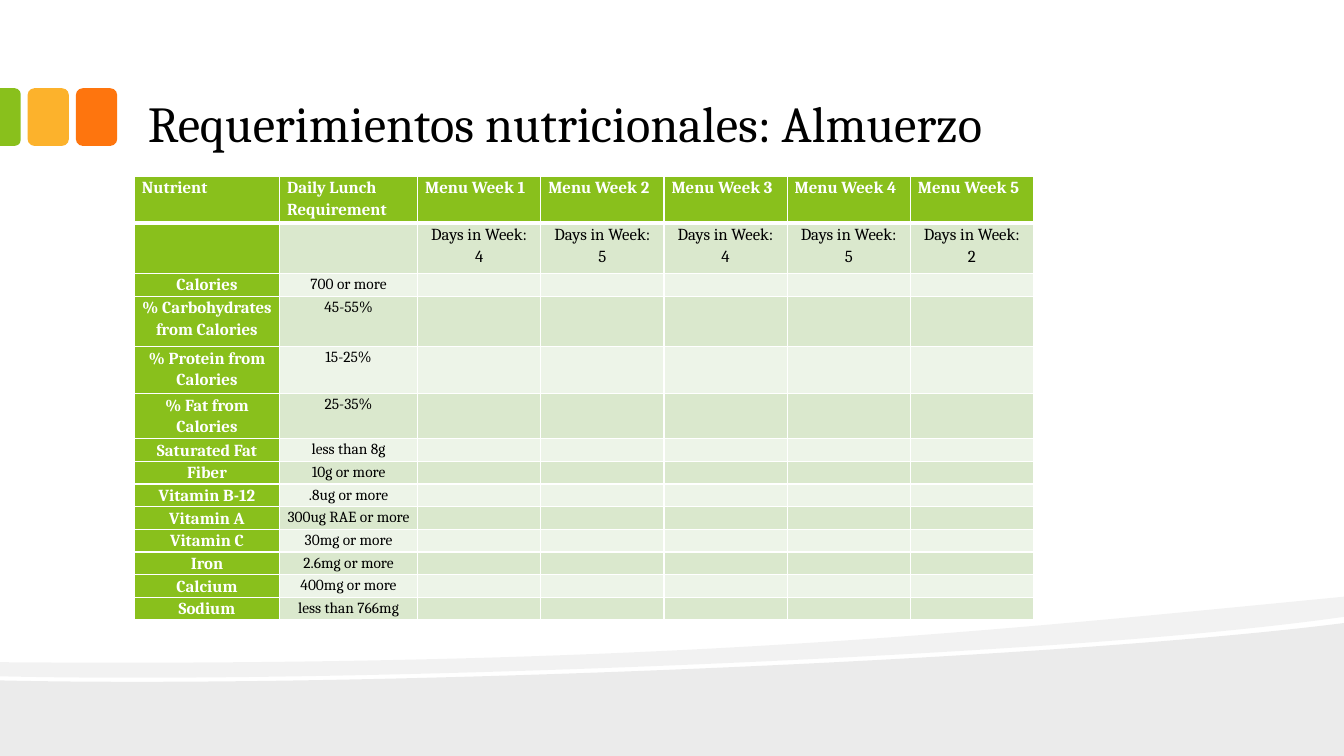
from dataclasses import dataclass

from lxml import etree
from pptx import Presentation
from pptx.dml.color import RGBColor
from pptx.enum.shapes import MSO_SHAPE
from pptx.enum.text import MSO_ANCHOR, PP_ALIGN
from pptx.oxml.ns import qn
from pptx.util import Pt

ROUNDED, ROUNDED_TOP = MSO_SHAPE.ROUNDED_RECTANGLE, MSO_SHAPE.ROUND_2_SAME_RECTANGLE
LEFT, CENTER = PP_ALIGN.LEFT, PP_ALIGN.CENTER
BOTTOM = MSO_ANCHOR.BOTTOM

Point = tuple[float, float]


@dataclass(frozen=True)
class Theme:
    font: str = "Cambria"
    black: str = "000000"
    white: str = "FFFFFF"
    green: str = "89C01C"
    amber: str = "FCB22C"
    orange: str = "FE750E"
    band_dark: str = "DAE8CD"
    band_light: str = "EDF4E8"
    title_size: float = 36
    label_size: float = 12
    value_size: float = 11
    line_spacing: float = 1.12


@dataclass(frozen=True)
class Tab:
    left: float
    top: float
    width: float
    height: float
    color: str
    preset: int = ROUNDED
    rotation: float = 0


@dataclass(frozen=True)
class Wave:
    outline: list[Point]
    curve_starts: list[int]  # each curve takes three outline points from here
    opacity: int


@dataclass(frozen=True)
class Nutrient:
    name: str
    requirement: str
    height: float = 16.2


THEME = Theme()
PAGE_WIDTH, PAGE_HEIGHT = 960, 540

WAVES = [
    Wave([(PAGE_WIDTH, 445), (PAGE_WIDTH, PAGE_HEIGHT), (0, PAGE_HEIGHT), (0, 486),
          (253.4, 491.8), (750.2, 471.6), (PAGE_WIDTH, 445)], [4], 8),
    Wave([(PAGE_WIDTH, 426.2), (PAGE_WIDTH, 440.6),
          (903.6, 448.6), (827.3, 455.8), (740.9, 461.5),
          (502.6, 477.4), (185.8, 487.4), (0, 483.1), (0, 473),
          (469.4, 476.6), (699.1, 451.4), (PAGE_WIDTH, 426.2)], [2, 5, 9], 5),
]
TABS = [
    Tab(54.2, 63, 29.5, 41.2, THEME.orange),
    Tab(19.7, 63, 29.5, 41.2, THEME.amber),
    Tab(-13.2, 76.2, 41.2, 14.8, THEME.green, ROUNDED_TOP, 90),
]
HEADINGS = ["Nutrient", "Daily Lunch Requirement"]
DAYS_IN_WEEK = [4, 5, 4, 5, 2]
NUTRIENTS = [
    Nutrient("Calories", "700 or more"),
    Nutrient("% Carbohydrates from Calories", "45-55%", 36),
    Nutrient("% Protein from Calories", "15-25%", 33.6),
    Nutrient("% Fat from Calories", "25-35%", 31.8),
    Nutrient("Saturated Fat", "less than 8g"),
    Nutrient("Fiber", "10g or more"),
    Nutrient("Vitamin B-12", ".8ug or more"),
    Nutrient("Vitamin A", "300ug RAE or more"),
    Nutrient("Vitamin C", "30mg or more"),
    Nutrient("Iron", "2.6mg or more"),
    Nutrient("Calcium", "400mg or more"),
    Nutrient("Sodium", "less than 766mg"),
]
HEADER_HEIGHTS = [33.4, 36]
COLUMN_WIDTHS = [103.7, 98.6] + [88] * len(DAYS_IN_WEEK)


def write(frame, text: str, *, size: float, color: str = THEME.black, bold: bool = False,
          align: int = LEFT, spacing: float = 1.0) -> None:
    """Fill a text frame, one paragraph per line of text."""
    for index, line in enumerate(text.split("\n")):
        para = frame.add_paragraph() if index else frame.paragraphs[0]
        para.alignment, para.line_spacing = align, spacing
        span = para.add_run()
        span.text = line
        span.font.name, span.font.size, span.font.bold = THEME.font, Pt(size), bold
        span.font.color.rgb = RGBColor.from_string(color)


def paint(shape, color: str) -> None:
    shape.shadow.inherit = False
    shape.fill.solid()
    shape.fill.fore_color.rgb = RGBColor.from_string(color)
    shape.line.fill.background()


def add_wave(page, wave: Wave) -> None:
    corners = [(Pt(x), Pt(y)) for x, y in wave.outline]
    builder = page.shapes.build_freeform(*corners[0])
    builder.add_line_segments(corners[1:], close=True)
    shape = builder.convert_to_shape()
    paint(shape, THEME.black)
    properties = shape.element.spPr

    # Join three straight steps into one Bezier curve
    steps = list(next(properties.iter(qn("a:moveTo"))).getparent())
    for start in wave.curve_starts:
        bend = etree.Element(qn("a:cubicBezTo"))
        steps[start].addprevious(bend)
        for step in steps[start:start + 3]:
            bend.append(step[0])
            step.getparent().remove(step)

    tint = properties.find(qn("a:solidFill")).find(qn("a:srgbClr"))
    etree.SubElement(tint, qn("a:alpha"), val=str(wave.opacity * 1000))


def add_tab(page, tab: Tab) -> None:
    shape = page.shapes.add_shape(tab.preset, Pt(tab.left), Pt(tab.top),
                                  Pt(tab.width), Pt(tab.height))
    shape.rotation = tab.rotation
    if tab.preset == ROUNDED_TOP:
        shape.adjustments[0] = 0.29
    paint(shape, tab.color)


def add_borders(cell, top: float, bottom: float) -> None:
    properties = cell._tc.get_or_add_tcPr()
    for index, (side, width) in enumerate(zip("LRTB", (1, 1, top, bottom))):
        line = etree.Element(qn(f"a:ln{side}"), w=str(Pt(width)))
        solid = etree.SubElement(line, qn("a:solidFill"))
        etree.SubElement(solid, qn("a:srgbClr"), val=THEME.white)
        properties.insert(index, line)


def add_nutrient_table(page) -> None:
    weeks = range(1, len(DAYS_IN_WEEK) + 1)
    rows = [HEADINGS + [f"Menu Week {week}" for week in weeks],
            ["", ""] + [f"Days in Week:\n{days}" for days in DAYS_IN_WEEK]]
    rows += [[item.name, item.requirement] + [""] * len(DAYS_IN_WEEK) for item in NUTRIENTS]
    heights = HEADER_HEIGHTS + [item.height for item in NUTRIENTS]

    table = page.shapes.add_table(len(rows), len(COLUMN_WIDTHS), Pt(96), Pt(126),
                                  Pt(sum(COLUMN_WIDTHS)), Pt(sum(heights))).table
    for column, width in zip(table.columns, COLUMN_WIDTHS):
        column.width = Pt(width)
    for r, (texts, height) in enumerate(zip(rows, heights)):
        table.rows[r].height = Pt(height)
        for c, text in enumerate(texts):
            cell = table.cell(r, c)
            heading = r == 0 or c == 0
            band = THEME.band_dark if r % 2 else THEME.band_light
            cell.margin_left = cell.margin_right = Pt(5.4)
            cell.margin_top = cell.margin_bottom = 0
            cell.fill.solid()
            cell.fill.fore_color.rgb = RGBColor.from_string(THEME.green if heading else band)
            add_borders(cell, top=3 if r == 1 else 1, bottom=3 if r == 0 else 1)
            if not text:  # a small end mark keeps an empty cell from growing its row
                etree.SubElement(cell.text_frame.paragraphs[0]._p, qn("a:endParaRPr"),
                                 sz=str(THEME.value_size * 100))
                continue
            write(cell.text_frame, text,
                  size=THEME.label_size if heading or r == 1 else THEME.value_size,
                  color=THEME.white if heading else THEME.black, bold=heading,
                  align=CENTER if r else LEFT, spacing=THEME.line_spacing)


def main() -> None:
    deck = Presentation()
    deck.slide_width, deck.slide_height = Pt(PAGE_WIDTH), Pt(PAGE_HEIGHT)
    page = deck.slides.add_slide(deck.slide_layouts[6])

    # Grey waves along the foot
    for wave in WAVES:
        add_wave(page, wave)

    # Coloured tabs at the left edge
    for tab in TABS:
        add_tab(page, tab)

    # Title
    box = page.shapes.add_textbox(Pt(96), Pt(12.2), Pt(767.5), Pt(102.2))
    frame = box.text_frame
    frame.word_wrap, frame.vertical_anchor = True, BOTTOM
    frame.margin_left = frame.margin_right = Pt(9.6)
    frame.margin_top = frame.margin_bottom = Pt(4.8)
    write(frame, "Requerimientos nutricionales: Almuerzo", size=THEME.title_size, spacing=0.9)

    # Requirements by nutrient and week
    add_nutrient_table(page)
    deck.save("out.pptx")


if __name__ == "__main__":
    main()
